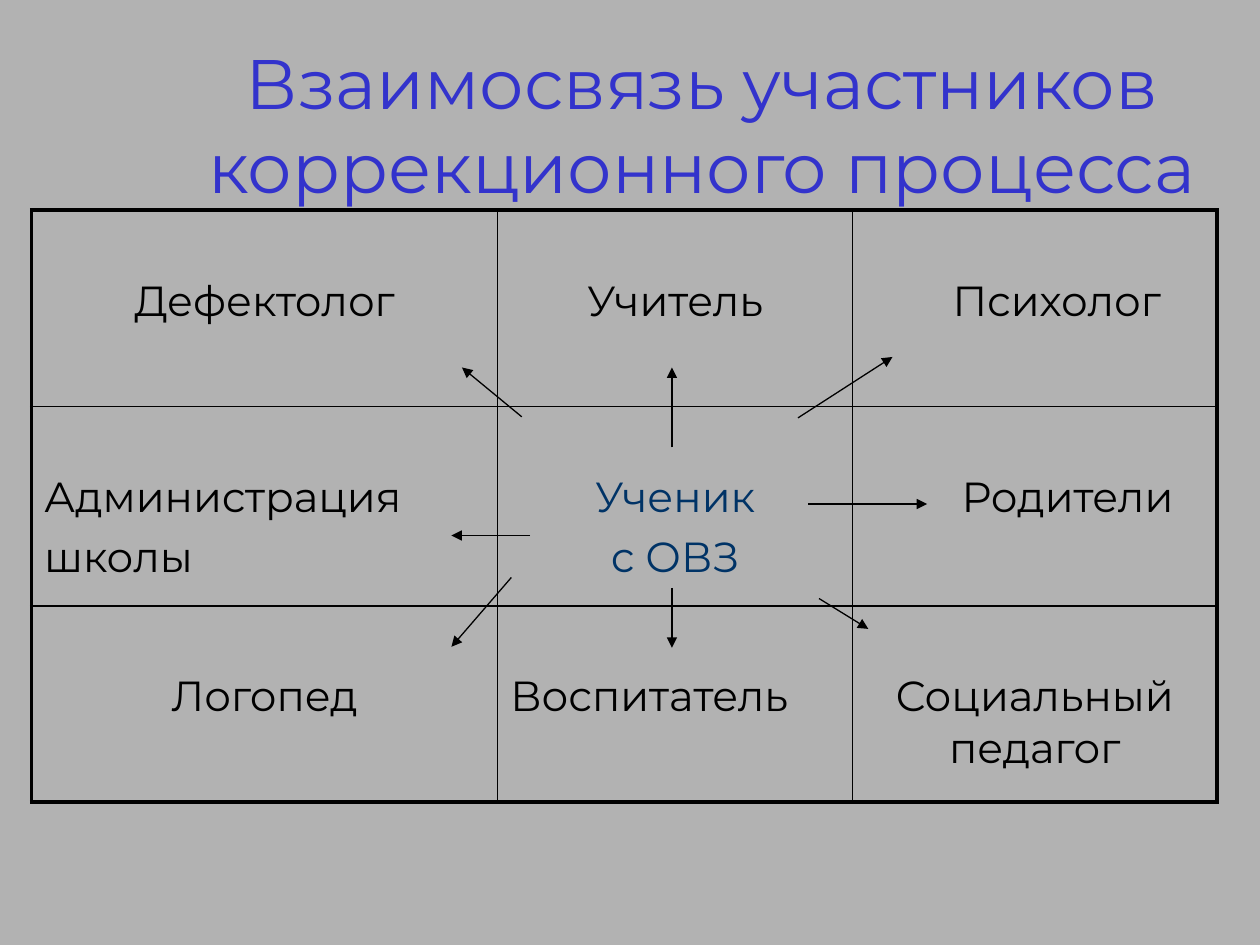
import pptx
import pptx.dml.color
import pptx.enum.shapes
import pptx.enum.text
import pptx.oxml.ns
import pptx.util
from lxml import etree

COLORS = {"background": "B2B2B2", "title": "3333CC", "text": "000000", "pupil": "003366"}
FONT = "Montserrat"
ALIGN = pptx.enum.text.PP_ALIGN
CELL = 1 / 12  # grid unit in inches: 120 columns by 90 rows


def grid(units):
    return pptx.util.Inches(units * CELL)


def rgb(name):
    return pptx.dml.color.RGBColor.from_string(COLORS[name])


def add_xml(parent, tag, **attributes):
    return etree.SubElement(parent, pptx.oxml.ns.qn(tag), **attributes)


class SlideBuilder:
    def __init__(self, slide):
        self.slide = slide
        slide.background.fill.solid()
        slide.background.fill.fore_color.rgb = rgb("background")

    def set_text(self, frame, text, size, color, align):
        frame.word_wrap = True
        frame.text = text
        for number, paragraph in enumerate(frame.paragraphs):
            paragraph.alignment = align
            if number:
                paragraph.space_before = pptx.util.Pt(size * 0.2)
            for run in paragraph.runs:
                run.font.name = FONT
                run.font.size = pptx.util.Pt(size)
                run.font.color.rgb = rgb(color)

    def title(self, text, left, top, width, height):
        box = self.slide.shapes.add_textbox(*map(grid, (left, top, width, height)))
        frame = box.text_frame
        frame.margin_left = frame.margin_right = frame.margin_top = frame.margin_bottom = 0
        frame.vertical_anchor = pptx.enum.text.MSO_ANCHOR.MIDDLE
        self.set_text(frame, text, 40, "title", ALIGN.CENTER)

    def border(self, cell, sides):
        properties = cell._tc.get_or_add_tcPr()
        for side, width in sides.items():
            line = add_xml(properties, f"a:ln{side}", w=str(pptx.util.Pt(width)))
            fill = add_xml(line, "a:solidFill")
            add_xml(fill, "a:srgbClr", val=COLORS["text"])

    def table(self, rows, left, top, widths, heights):
        frame = self.slide.shapes.add_table(
            len(heights), len(widths), grid(left), grid(top),
            grid(sum(widths)), grid(sum(heights)))
        table = frame.table
        table.first_row = table.horz_banding = False
        for column, width in zip(table.columns, widths):
            column.width = grid(width)
        for row, height in zip(table.rows, heights):
            row.height = grid(height)
        last_row, last_column = len(heights) - 1, len(widths) - 1
        for r, row in enumerate(rows):
            for c, (text, color, align, indent) in enumerate(row):
                cell = table.cell(r, c)
                cell.margin_top = pptx.util.Inches(0.52)
                cell.margin_left = pptx.util.Inches(0.1 + indent)
                self.set_text(cell.text_frame, text, 24, color, align)
                # Heavy outer frame, thin inner lines
                outer = {"L": c == 0, "R": c == last_column, "T": r == 0, "B": r == last_row}
                self.border(cell, {side: 2.25 if edge else 1 for side, edge in outer.items()})
                cell.fill.background()

    def arrow(self, start, end):
        line = self.slide.shapes.add_connector(
            pptx.enum.shapes.MSO_CONNECTOR.STRAIGHT, *map(grid, (*start, *end)))
        line.line.color.rgb = rgb("text")
        line.line.width = pptx.util.Pt(0.75)
        add_xml(line.line._get_or_add_ln(), "a:tailEnd", type="triangle")
        add_xml(line._element.spPr, "a:effectLst")


def main():
    deck = pptx.Presentation()
    deck.slide_width, deck.slide_height = grid(120), grid(90)
    builder = SlideBuilder(deck.slides.add_slide(deck.slide_layouts[6]))

    # Heading
    builder.title("Взаимосвязь участников коррекционного процесса", 18.7, 3.6, 96.3, 16.3)

    # Participants: text, colour, alignment, extra left indent in inches
    participants = [
        [("Дефектолог", "text", ALIGN.CENTER, 0),
         ("Учитель", "text", ALIGN.CENTER, 0),
         ("Психолог", "text", ALIGN.CENTER, 0.35)],
        [("Администрация\nшколы", "text", ALIGN.LEFT, 0),
         ("Ученик\nс ОВЗ", "pupil", ALIGN.CENTER, 0),
         ("Родители", "text", ALIGN.CENTER, 0.52)],
        [("Логопед", "text", ALIGN.CENTER, 0),
         ("Воспитатель", "text", ALIGN.LEFT, 0),
         ("Социальный педагог", "text", ALIGN.CENTER, 0)],
    ]
    builder.table(participants, 3, 20, (44.4, 33.8, 34.7), (18.7, 19, 18.7))

    # Arrows from the pupil to every participant
    for start, end in [
        ((49.7, 39.7), (44, 35)),
        ((76, 39.8), (85, 34)),
        ((64, 42.6), (64, 35)),
        ((48.7, 55), (43, 61.6)),
        ((78, 57), (82.7, 59.9)),
        ((64, 56), (64, 61.7)),
        ((50.5, 51), (43, 51)),
        ((77, 48), (88.3, 48)),
    ]:
        builder.arrow(start, end)

    deck.save("out.pptx")


if __name__ == "__main__":
    main()
